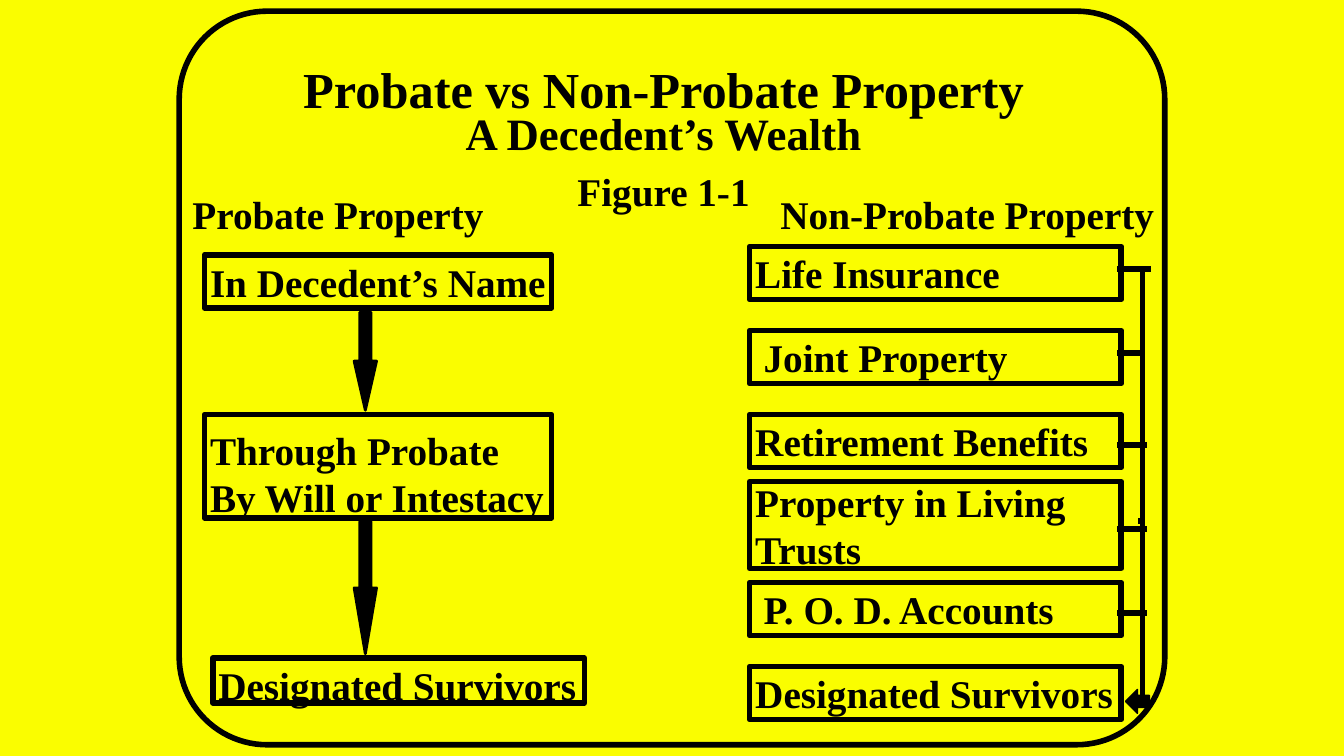
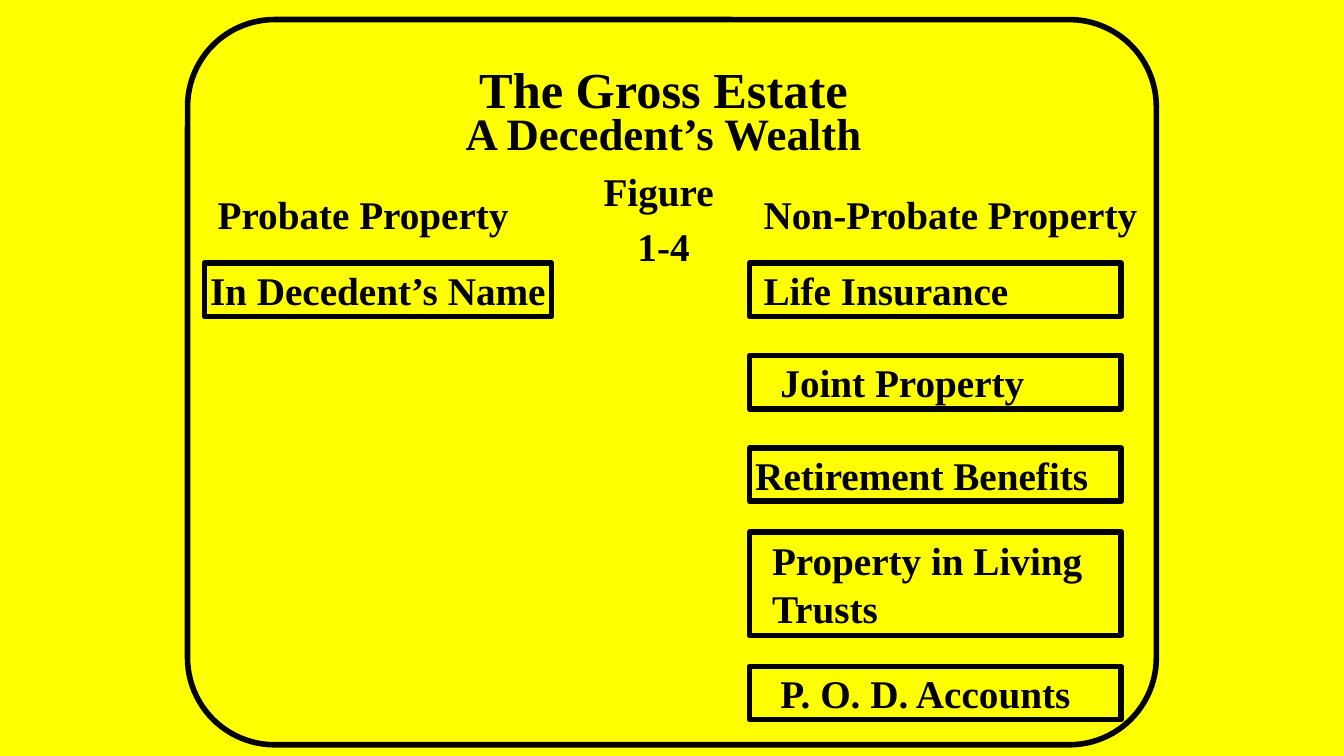
from lxml import etree
from pptx import Presentation
from pptx.dml.color import RGBColor
from pptx.enum.shapes import MSO_CONNECTOR, MSO_SHAPE
from pptx.enum.text import MSO_ANCHOR, PP_ALIGN
from pptx.oxml.ns import qn
from pptx.util import Pt

RECTANGLE = MSO_SHAPE.RECTANGLE
ROUNDED = MSO_SHAPE.ROUNDED_RECTANGLE
DOWN_ARROW = MSO_SHAPE.DOWN_ARROW
LEFT_ARROW = MSO_SHAPE.LEFT_ARROW
STRAIGHT = MSO_CONNECTOR.STRAIGHT
TOP, MIDDLE = MSO_ANCHOR.TOP, MSO_ANCHOR.MIDDLE
LEFT, CENTER = PP_ALIGN.LEFT, PP_ALIGN.CENTER

BLACK = RGBColor(0x00, 0x00, 0x00)
LEMON = RGBColor(0xFA, 0xFD, 0x00)
YELLOW = RGBColor(0xFF, 0xFF, 0x00)
FONT = "Times New Roman"
BODY_SIZE = 28
STROKE = 4

PROBATE_LEFT, PROBATE_WIDTH = 146, 248
OTHER_LEFT, OTHER_WIDTH = 535.5, 265.5
ROW = 38
SURVIVORS = ["Designated Survivors"]
TRUSTS = ["Property in Living", "Trusts"]

FIGURES = [
    {
        "background": LEMON,
        "title": "Probate vs Non-Probate Property",
        "subtitle": ["A Decedent’s Wealth", "Figure 1-1"],
        "headings": [("Probate Property", 137.5), ("Non-Probate Property", 557.5)],
        "frame": (128, 8, 704, 524),
        "probate": [
            (["In Decedent’s Name"], PROBATE_LEFT, 182, PROBATE_WIDTH, ROW, 4, 0),
            (["Through Probate", "By Will or Intestacy"], PROBATE_LEFT, 296, PROBATE_WIDTH, 74, 4, 10),
            (SURVIVORS, 152, 470, OTHER_WIDTH, 32, 4, 6),
        ],
        "other": [
            (["Life Insurance"], 176, ROW, 4),
            (["Joint Property"], 236, ROW, 10),
            (["Retirement Benefits"], 296, ROW, 4),
            (TRUSTS, 344, 62, 4),
            (["P. O. D. Accounts"], 416, ROW, 10),
            (SURVIVORS, 476, ROW, 4),
        ],
        "arrows": [
            (DOWN_ARROW, 253, 223, 16, 70, 2.19, 2),
            (DOWN_ARROW, 253, 372.5, 16, 94.5, 2.94, 2),
            (LEFT_ARROW, 804, 492.5, 17, 17, 0.5, 1),
        ],
        "bracket": [
            (816, 192, 816, 498),
            (822, 192, 798, 192),
            (816, 252, 798, 252),
            (819, 318, 798, 318),
            (813, 372, 814.5, 372),
            (819, 378, 798, 378),
            (819, 438, 798, 438),
        ],
    },
    {
        "background": YELLOW,
        "title": "The Gross Estate",
        "subtitle": ["A Decedent’s Wealth", "Figure ", "1-4"],
        "headings": [("Probate Property", 155.5), ("Non-Probate Property", 545.5)],
        "frame": (134, 14, 692, 518),
        "probate": [
            (["In Decedent’s Name"], PROBATE_LEFT, 188, PROBATE_WIDTH, ROW, 4, 0),
        ],
        "other": [
            (["Life Insurance"], 188, ROW, 10),
            (["Joint Property"], 254, ROW, 22),
            (["Retirement Benefits"], 320, ROW, 4),
            (TRUSTS, 380, 74, 16),
            (["P. O. D. Accounts"], 476, ROW, 22),
        ],
        "arrows": [],
        "bracket": [],
    },
]


def write(holder, lines, sizes, align=LEFT, anchor=MIDDLE, indent=0, drop=0, gap=0):
    frame = holder.text_frame
    frame.word_wrap = True
    frame.vertical_anchor = anchor
    frame.margin_left, frame.margin_top = Pt(indent), Pt(drop)
    frame.margin_right = frame.margin_bottom = 0
    frame.text = "\n".join(lines)
    for paragraph, size in zip(frame.paragraphs, sizes):
        paragraph.alignment = align
        paragraph.space_before = Pt(size * gap)
        paragraph.font.name = FONT
        paragraph.font.size = Pt(size)
        paragraph.font.bold = True
        paragraph.font.color.rgb = BLACK


def outline(slide, kind, left, top, width, height, stroke=STROKE):
    shape = slide.shapes.add_shape(kind, Pt(left), Pt(top), Pt(width), Pt(height))
    shape.shadow.inherit = False
    shape.fill.background()
    shape.line.color.rgb = BLACK
    shape.line.width = Pt(stroke)
    return shape


prs = Presentation()
prs.slide_width, prs.slide_height = Pt(960), Pt(540)
blank = prs.slide_layouts[6]

for figure in FIGURES:
    slide = prs.slides.add_slide(blank)
    slide.background.fill.solid()
    slide.background.fill.fore_color.rgb = figure["background"]

    title = slide.shapes.add_textbox(Pt(168), Pt(18), Pt(612), Pt(90))
    write(title, [figure["title"]], [36], CENTER)
    subtitle = slide.shapes.add_textbox(Pt(222), Pt(72), Pt(504), Pt(120))
    write(subtitle, figure["subtitle"], [32, BODY_SIZE, BODY_SIZE], CENTER, TOP, drop=3.6, gap=0.2)
    for text, left in figure["headings"]:
        heading = slide.shapes.add_textbox(Pt(left), Pt(136), Pt(285), Pt(34))
        write(heading, [text], [BODY_SIZE], anchor=TOP)

    other = [
        (lines, OTHER_LEFT, top, OTHER_WIDTH, height, indent, 0)
        for lines, top, height, indent in figure["other"]
    ]
    for lines, left, top, width, height, indent, drop in figure["probate"] + other:
        box = outline(slide, RECTANGLE, left, top, width, height)
        write(box, lines, [BODY_SIZE] * len(lines), indent=indent, drop=drop)

    for kind, left, top, width, height, head, stroke in figure["arrows"]:
        arrow = outline(slide, kind, left, top, width, height, stroke)
        arrow.fill.solid()
        arrow.fill.fore_color.rgb = BLACK
        arrow.adjustments[0] = 0.5
        arrow.adjustments[1] = head

    for x1, y1, x2, y2 in figure["bracket"]:
        bar = slide.shapes.add_connector(STRAIGHT, Pt(x1), Pt(y1), Pt(x2), Pt(y2))
        bar.line.color.rgb = BLACK
        bar.line.width = Pt(STROKE)
        etree.SubElement(bar._element.spPr, qn("a:effectLst"))

    border = outline(slide, ROUNDED, *figure["frame"])
    border.adjustments[0] = 0.12

prs.save("out.pptx")
